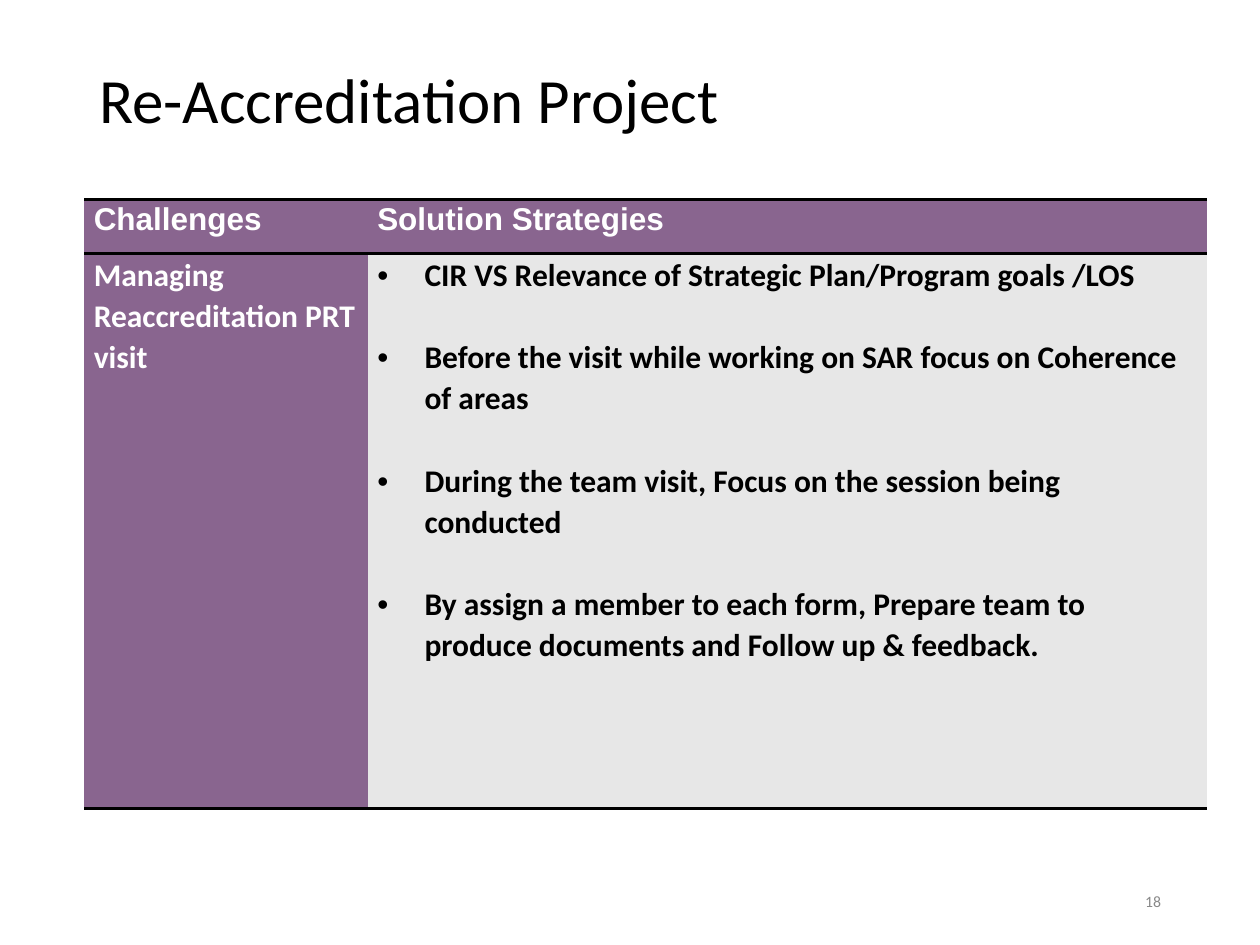
import pptx
import pptx.dml.color
import pptx.enum.text
import pptx.oxml
import pptx.oxml.ns
import pptx.util
from pptx.dml.color import RGBColor
from pptx.util import Pt

BLACK = RGBColor(0x00, 0x00, 0x00)
WHITE = RGBColor(0xFF, 0xFF, 0xFF)
PURPLE = RGBColor(0x89, 0x65, 0x8F)
LIGHT_GRAY = RGBColor(0xE7, 0xE7, 0xE7)
NUMBER_GRAY = RGBColor(0x89, 0x89, 0x89)

LEFT = pptx.enum.text.PP_ALIGN.LEFT
RIGHT = pptx.enum.text.PP_ALIGN.RIGHT
MIDDLE = pptx.enum.text.MSO_ANCHOR.MIDDLE
TITLE_ONLY = 5
PLAIN_TABLE = "{2D5ABB26-0587-4C30-8999-92F81FD0307C}"

STRATEGIES = [
    "CIR VS Relevance of Strategic Plan/Program goals /LOS",
    "Before the visit while working on SAR focus on Coherence of areas",
    "During the team visit, Focus on the session being conducted",
    "By assign a member to each form, Prepare team to produce documents "
    "and Follow up & feedback.",
]


def write_text(frame, lines, *, font="Calibri", size=18, color=BLACK, bold=False,
               align=LEFT, spacing=1.07, gap=0, bullet=False):
    """Fill a text frame with one formatted paragraph for each line."""
    frame.word_wrap = True
    for index, line in enumerate(lines):
        para = frame.paragraphs[0] if index == 0 else frame.add_paragraph()
        para.alignment = align
        para.line_spacing = spacing
        para.space_before = Pt(gap if index else 0)
        span = para.add_run()
        span.text = line
        span.font.name = font
        span.font.size = Pt(size)
        span.font.bold = bold
        span.font.color.rgb = color
        if bullet:
            add_bullet(para)


def add_bullet(para, indent=27):
    properties = para._p.get_or_add_pPr()
    properties.set("marL", str(Pt(indent)))
    properties.set("indent", str(-Pt(indent)))
    properties.append(pptx.oxml.parse_xml(
        f'<a:buFont {pptx.oxml.ns.nsdecls("a")} typeface="Arial"/>'))
    properties.append(pptx.oxml.parse_xml(
        f'<a:buChar {pptx.oxml.ns.nsdecls("a")} char="•"/>'))


def add_borders(cell, sides, width=2):
    """Draw cell borders; sides are given in schema order, top before bottom."""
    properties = cell._tc.get_or_add_tcPr()
    for index, side in enumerate(sides):
        properties.insert(index, pptx.oxml.parse_xml(
            f'<a:ln{side} {pptx.oxml.ns.nsdecls("a")} w="{Pt(width)}">'
            f'<a:solidFill><a:srgbClr val="{BLACK}"/></a:solidFill></a:ln{side}>'))


class SlideBuilder:
    def __init__(self, deck, layout):
        self.page = deck.slides.add_slide(deck.slide_layouts[layout])

    def title(self, text, left, top, width, height):
        box = self.page.shapes.title
        box.left, box.top, box.width, box.height = map(Pt, (left, top, width, height))
        box.text_frame.vertical_anchor = MIDDLE
        write_text(box.text_frame, [text], size=36)

    def label(self, text, left, top, width, height, **style):
        box = self.page.shapes.add_textbox(*map(Pt, (left, top, width, height)))
        box.text_frame.vertical_anchor = MIDDLE
        write_text(box.text_frame, [text], **style)

    def table(self, left, top, widths, heights):
        frame = self.page.shapes.add_table(
            len(heights), len(widths),
            *map(Pt, (left, top, sum(widths), sum(heights))))
        table = frame.table
        table.first_row = table.horz_banding = False
        frame._element.find(".//" + pptx.oxml.ns.qn("a:tableStyleId")).text = PLAIN_TABLE
        for column, width in zip(table.columns, widths):
            column.width = Pt(width)
        for row, height in zip(table.rows, heights):
            row.height = Pt(height)
        return table

    def cell(self, cell, lines, fill, borders, **style):
        cell.margin_left = cell.margin_right = Pt(5.4)
        cell.margin_top = cell.margin_bottom = 0
        cell.fill.solid()
        cell.fill.fore_color.rgb = fill
        add_borders(cell, borders)
        write_text(cell.text_frame, lines, bold=True, **style)


def main():
    deck = pptx.Presentation()
    deck.slide_width, deck.slide_height = Pt(720), Pt(540)
    builder = SlideBuilder(deck, TITLE_ONLY)

    # Title
    builder.title("Re-Accreditation Project", 49.5, 13, 621, 83.5)

    # Challenges and strategies
    table = builder.table(48.2, 114, widths=[162, 479.5], heights=[31, 317])
    for column, heading in enumerate(["Challenges", "Solution Strategies"]):
        builder.cell(table.cell(0, column), [heading], PURPLE, "TB",
                     font="Arial", color=WHITE)
    builder.cell(table.cell(1, 0), ["Managing Reaccreditation PRT visit"], PURPLE,
                 "TB", color=WHITE)
    builder.cell(table.cell(1, 1), STRATEGIES, LIGHT_GRAY, "TB",
                 gap=23.5, bullet=True)

    # Slide number
    builder.label("18", 508.5, 500.5, 162, 28.75, size=9, color=NUMBER_GRAY,
                  align=RIGHT, spacing=1.0)

    deck.save("out.pptx")


if __name__ == "__main__":
    main()
